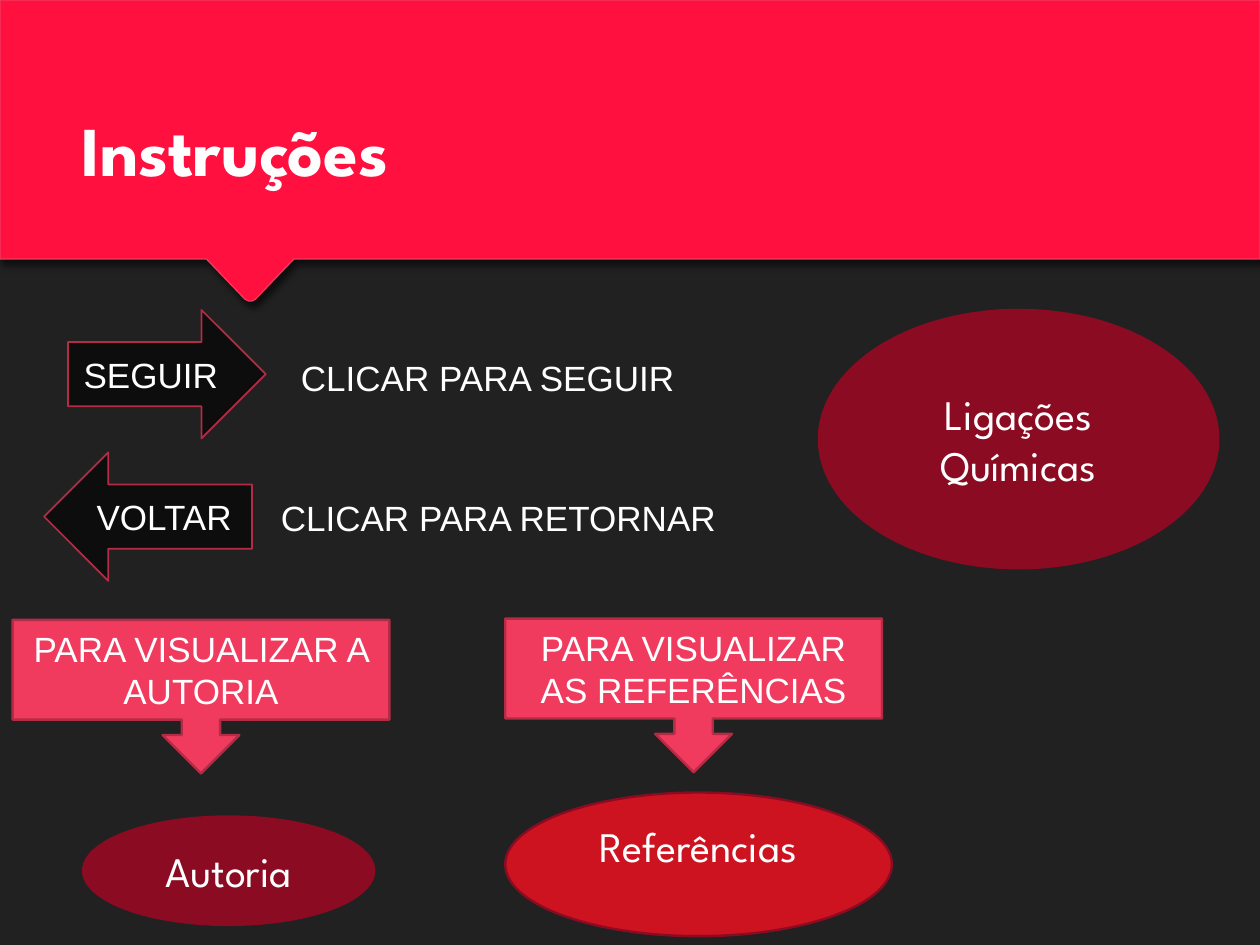
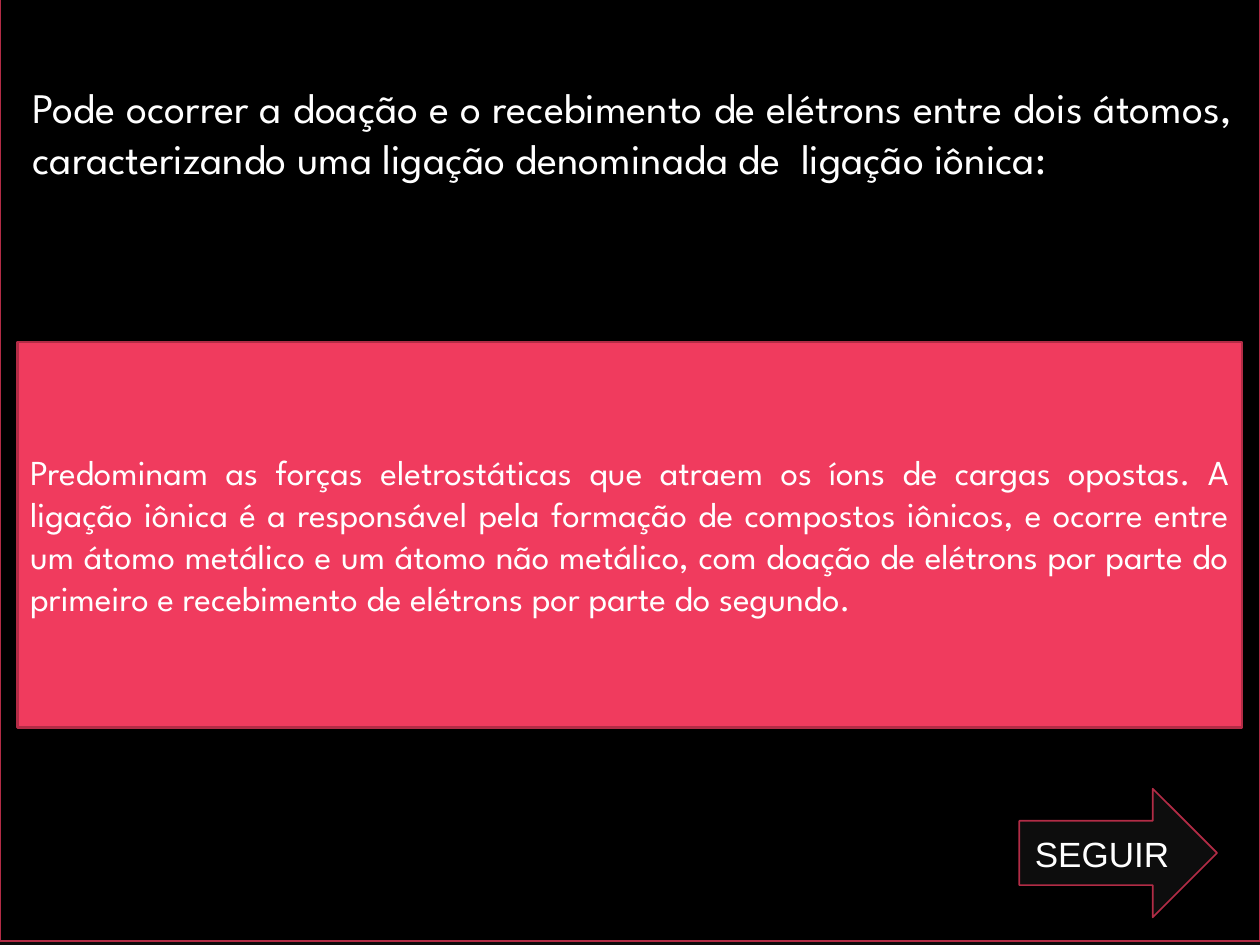
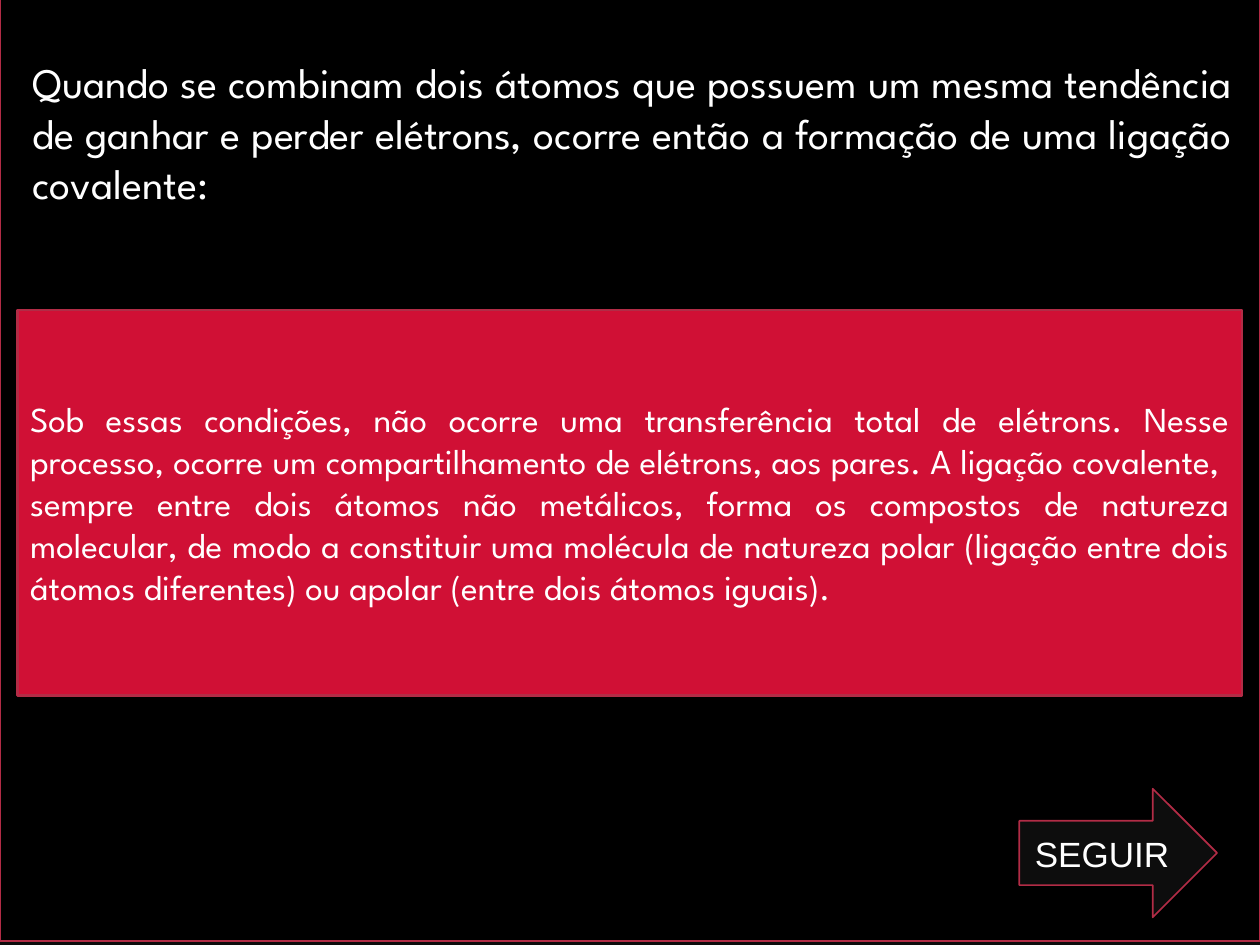
from lxml import etree
from pptx import Presentation
from pptx.dml.color import RGBColor
from pptx.enum import shapes, text
from pptx.oxml.ns import qn
from pptx.util import Pt

COLORS = {
    "slate": "212121", "ink": "0D0D0D", "black": "000000", "white": "FFFFFF",
    "title": "FEFEFE", "band": "FF103F", "pink": "F03B5E", "edge": "B22C46",
    "wine": "8B0B23", "red": "CD1320", "crimson": "D01035",
}
HEAD, BODY = "League Spartan", "Arial"
SHAPE, ALIGN, ANCHOR = shapes.MSO_SHAPE, text.PP_ALIGN, text.MSO_ANCHOR
WIDTH, HEIGHT = 720, 540
ARROW_H = 73.44
# Outline of the title band with its rounded pointer
BAND = [(720, 0), (0, 0), (0, 148.5), (118, 148.5), (140.5, 171.4), (142, 172),
        (144, 172), (145.5, 171.4), (168.4, 148.5), (720, 148.5)]


def rgb(name):
    return RGBColor.from_string(COLORS[name])


def new_slide(prs, background):
    s = prs.slides.add_slide(prs.slide_layouts[6])
    s.background.fill.solid()
    s.background.fill.fore_color.rgb = rgb(background)
    return s


def add_shadow(effects, blur=4, dist=3, angle=45, alpha=60):
    """Fill an effect list with an outer black shadow."""
    shadow = etree.SubElement(effects, qn("a:outerShdw"), blurRad=str(Pt(blur)),
                              dist=str(Pt(dist)), dir=str(angle * 60000))
    color = etree.SubElement(shadow, qn("a:srgbClr"), val=COLORS["black"])
    etree.SubElement(color, qn("a:alpha"), val=str(alpha * 1000))


def paint(sp, fill, line, weight):
    sp.shadow.inherit = False
    sp.fill.solid()
    sp.fill.fore_color.rgb = rgb(fill)
    sp.line.color.rgb = rgb(line)
    sp.line.width = Pt(weight)


def write(sp, content, size=20, font=BODY, color="white", bold=False,
          align=ALIGN.CENTER, anchor=ANCHOR.MIDDLE, bottom=3.6):
    tf = sp.text_frame
    tf.word_wrap = True
    tf.vertical_anchor = anchor
    tf.margin_bottom = Pt(bottom)
    p = tf.paragraphs[0]
    p.alignment = align
    r = p.add_run()
    r.text = content
    r.font.size, r.font.bold, r.font.name = Pt(size), bold, font
    r.font.color.rgb = rgb(color)
    return r


def add_box(s, kind, at, fill, line="edge", weight=1.35, content=None, **fmt):
    sp = s.shapes.add_shape(kind, *map(Pt, at))
    paint(sp, fill, line, weight)
    if content:
        write(sp, content, **fmt)
    return sp


def add_label(s, at, content, **fmt):
    return write(s.shapes.add_textbox(*map(Pt, at)), content,
                 **{"align": ALIGN.LEFT, "anchor": ANCHOR.TOP, **fmt})


def add_band(s, title):
    builder = s.shapes.build_freeform(*BAND[0], scale=Pt(1))
    builder.add_line_segments(BAND[1:], close=True)
    sp = builder.convert_to_shape()
    paint(sp, "band", "pink", 0.75)
    add_shadow(sp._element.spPr.find(qn("a:effectLst")))
    r = add_label(s, (39.6, 36, 592.5, 76.3), title, size=40, font=HEAD,
                  color="title", bold=True, anchor=ANCHOR.BOTTOM)
    effects = etree.Element(qn("a:effectLst"))
    r.font._element.find(qn("a:solidFill")).addnext(effects)
    add_shadow(effects)


def add_arrow(s, kind, left, top, width, content):
    add_box(s, kind, (left, top, width, ARROW_H), "ink", weight=1, content=content)


def add_next(s, left, top):
    add_arrow(s, SHAPE.RIGHT_ARROW, left, top, 113, "SEGUIR")


def add_ellipse(s, at, content, fill="wine", **fmt):
    add_box(s, SHAPE.OVAL, at, fill, "wine", content=content, size=24, font=HEAD, **fmt)


def instructions_slide(prs):
    s = new_slide(prs, "slate")
    add_band(s, "Instruções")

    # Topic ellipses
    add_ellipse(s, (288.7, 452.9, 221, 82.1), "Referências", fill="red", bottom=25.2)
    add_ellipse(s, (468, 177.1, 228.2, 147.6), "Ligações Químicas")
    add_ellipse(s, (47.5, 466.6, 166.3, 61.9), "Autoria")

    # Navigation arrows and their captions
    add_next(s, 38.9, 177.1)
    add_arrow(s, SHAPE.LEFT_ARROW, 25.2, 258.5, 118.8, "VOLTAR")
    add_label(s, (153.4, 280.1, 271.4, 31.7), "CLICAR PARA RETORNAR")
    add_label(s, (164.9, 200.2, 248.4, 31.7), "CLICAR PARA SEGUIR")

    # Callouts pointing at the lower ellipses
    for left, top, content in [(7.2, 354.2, "PARA VISUALIZAR A AUTORIA"),
                               (288.7, 353.5, "PARA VISUALIZAR AS REFERÊNCIAS")]:
        add_box(s, SHAPE.DOWN_ARROW_CALLOUT, (left, top, 215.3, 87.8), "pink",
                content=content)


def bond_slide(prs, intro, detail, fill, detail_top):
    s = new_slide(prs, "ink")
    add_box(s, SHAPE.RECTANGLE, (0, -3.6, WIDTH, 541.4), "black")
    add_next(s, 582.5, 450.7)
    prose = {"font": HEAD, "align": ALIGN.JUSTIFY}
    add_box(s, SHAPE.RECTANGLE, (10.1, detail_top, 699.8, 220.3), fill,
            content=detail, **prose)
    add_box(s, SHAPE.RECTANGLE, (11.5, 7.2, 699.8, 158.4), "black", "black",
            content=intro, size=24, bottom=25.2, **prose)


def main():
    prs = Presentation()
    prs.slide_width, prs.slide_height = Pt(WIDTH), Pt(HEIGHT)
    instructions_slide(prs)

    # Ionic bond
    bond_slide(
        prs,
        "Pode ocorrer a doação e o recebimento de elétrons entre dois átomos, "
        "caracterizando uma ligação denominada de  ligação iônica:",
        "Predominam as forças eletrostáticas que atraem os íons de cargas "
        "opostas. A ligação iônica é a responsável pela formação de compostos "
        "iônicos, e ocorre entre um átomo metálico e um átomo não metálico, com "
        "doação de elétrons por parte do primeiro e recebimento de elétrons por "
        "parte do segundo.",
        "pink", 195.5)

    # Covalent bond
    bond_slide(
        prs,
        "Quando se combinam dois átomos que possuem um mesma tendência de ganhar "
        "e perder elétrons, ocorre então a formação de uma ligação covalente:",
        "Sob essas condições, não ocorre uma transferência total de elétrons. "
        "Nesse processo, ocorre um compartilhamento de elétrons, aos pares. A "
        "ligação covalente,  sempre entre dois átomos não metálicos, forma os "
        "compostos de natureza molecular, de modo a constituir uma molécula de "
        "natureza polar (ligação entre dois átomos diferentes) ou apolar (entre "
        "dois átomos iguais).",
        "crimson", 177.1)
    prs.save("out.pptx")


if __name__ == "__main__":
    main()
